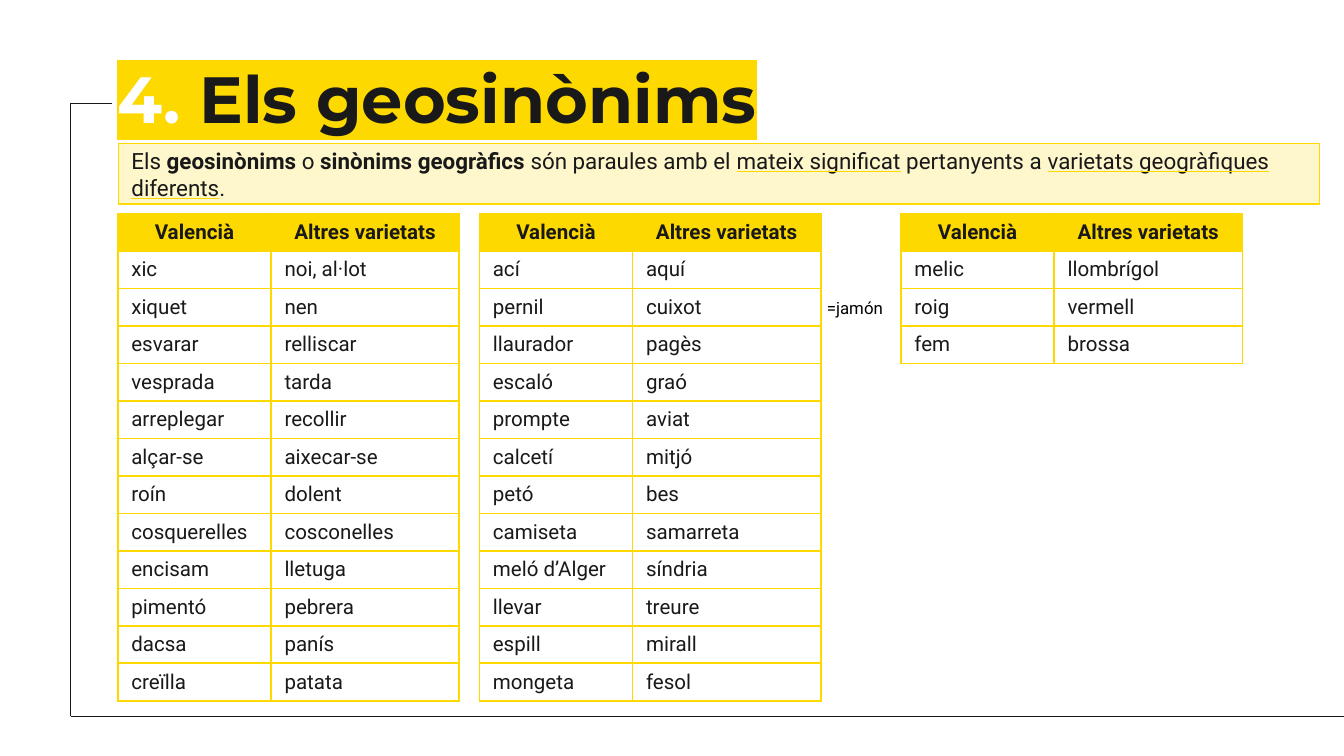
from lxml import etree
from pptx import Presentation
from pptx import util as u
from pptx.dml.color import RGBColor
from pptx.enum import shapes, text
from pptx.oxml import ns

UNIT = u.Inches(0.1)
COLUMNS, ROWS = 100, 56.25
COLORS = {"ink": "191919", "yellow": "FDD900", "white": "FFFFFF", "black": "000000"}
HEADERS = ("Valencià", "Altres varietats")
COLUMN_WIDTHS = (11.4, 14)
ROW_HEIGHT = 2.78
TABLE_TOP = 15.9
WORDS = [
    (8.77, [("xic", "noi, al·lot"), ("xiquet", "nen"), ("esvarar", "relliscar"),
            ("vesprada", "tarda"), ("arreplegar", "recollir"), ("alçar-se", "aixecar-se"),
            ("roín", "dolent"), ("cosquerelles", "cosconelles"), ("encisam", "lletuga"),
            ("pimentó", "pebrera"), ("dacsa", "panís"), ("creïlla", "patata")]),
    (35.67, [("ací", "aquí"), ("pernil", "cuixot"), ("llaurador", "pagès"),
             ("escaló", "graó"), ("prompte", "aviat"), ("calcetí", "mitjó"),
             ("petó", "bes"), ("camiseta", "samarreta"), ("meló d’Alger", "síndria"),
             ("llevar", "treure"), ("espill", "mirall"), ("mongeta", "fesol")]),
    (67.04, [("melic", "llombrígol"), ("roig", "vermell"), ("fem", "brossa")]),
]


def grid(*values):
    """Turn grid columns or rows into lengths."""
    return [u.Emu(round(value * UNIT)) for value in values]


def rgb(name):
    """Return a named colour."""
    return RGBColor.from_string(COLORS[name])


def add_solid(parent, tag, color, wrapped=True):
    """Append an element that holds a colour, inside a solid fill if wrapped."""
    element = etree.SubElement(parent, ns.qn(tag))
    holder = etree.SubElement(element, ns.qn("a:solidFill")) if wrapped else element
    etree.SubElement(holder, ns.qn("a:srgbClr"), val=COLORS[color])
    return element


def write(paragraph, content, size=11, font="Roboto", color="ink", bold=False,
          underline=None, highlight=None, align=text.PP_ALIGN.LEFT):
    """Add one formatted run to a paragraph."""
    paragraph.alignment = align
    run = paragraph.add_run()
    run.text = content
    run.font.size = u.Pt(size)
    run.font.bold = bold
    run.font.color.rgb = rgb(color)
    properties = run.font._element
    if highlight:
        add_solid(properties, "a:highlight", highlight, wrapped=False)
    if underline:
        run.font.underline = True
        add_solid(properties, "a:uFill", underline)
    run.font.name = font


def set_margins(frame, margin):
    """Give a text frame the same margin on all sides."""
    frame.margin_left = frame.margin_right = margin
    frame.margin_top = frame.margin_bottom = margin


def add_frame_lines(slide, left, top, right, bottom, stub):
    """Draw the open line frame around the content."""
    for ends in ((left, top, stub, top), (left, top, left, bottom),
                 (left, bottom, right, bottom)):
        line = slide.shapes.add_connector(shapes.MSO_CONNECTOR.STRAIGHT, *grid(*ends))
        line.line.color.rgb = rgb("ink")
        line.line.width = u.Pt(0.75)
        etree.SubElement(line._element.spPr, ns.qn("a:effectLst"))


def add_title(slide, *box):
    """Fill the title placeholder with the highlighted heading."""
    title = slide.shapes.title
    title.left, title.top, title.width, title.height = grid(*box)
    frame = title.text_frame
    frame.auto_size = text.MSO_AUTO_SIZE.NONE
    frame.vertical_anchor = text.MSO_ANCHOR.TOP
    set_margins(frame, UNIT)
    for content, color in (("4. ", "white"), ("Els geosinònims", "ink")):
        write(frame.paragraphs[0], content, size=35, font="Montserrat", color=color,
              bold=True, highlight="yellow")


def add_definition(slide, *box):
    """Add the pale box with the definition."""
    shape = slide.shapes.add_shape(shapes.MSO_SHAPE.RECTANGLE, *grid(*box))
    shape.shadow.inherit = False
    shape.fill.solid()
    shape.fill.fore_color.rgb = rgb("yellow")
    tint = shape._element.spPr.find(".//" + ns.qn("a:srgbClr"))
    etree.SubElement(tint, ns.qn("a:alpha"), val="20000")
    shape.line.color.rgb = rgb("yellow")
    shape.line.width = u.Pt(0.75)
    frame = shape.text_frame
    frame.word_wrap = True
    frame.vertical_anchor = text.MSO_ANCHOR.MIDDLE
    strong, marked = {"bold": True}, {"underline": "yellow"}
    for content, style in (
        ("Els ", {}), ("geosinònims", strong), (" o ", {}),
        ("sinònims geogràfics", strong), (" són paraules amb el ", {}),
        ("mateix significat", marked), (" pertanyents a ", {}),
        ("varietats geogràfiques diferents", marked), (".", {}),
    ):
        write(frame.paragraphs[0], content, size=12, **style)


def format_cell(cell, content, header):
    """Write one cell with its borders and fill."""
    properties = cell._tc.get_or_add_tcPr()
    for side in ("L", "R", "T", "B"):
        add_solid(properties, f"a:ln{side}", "yellow").set("w", str(u.Pt(1)))
    if header:
        cell.fill.solid()
        cell.fill.fore_color.rgb = rgb("yellow")
    else:
        cell.fill.background()
    align = text.PP_ALIGN.CENTER if header else text.PP_ALIGN.LEFT
    write(cell.text_frame.paragraphs[0], content, bold=header, align=align)


def add_word_table(slide, left, top, pairs):
    """Add a two-column table of word pairs under the headers."""
    rows = [HEADERS, *pairs]
    box = grid(left, top, sum(COLUMN_WIDTHS), ROW_HEIGHT * len(rows))
    table = slide.shapes.add_table(len(rows), len(HEADERS), *box).table
    table.horz_banding = False
    for column, width in zip(table.columns, grid(*COLUMN_WIDTHS)):
        column.width = width
    for index, (row, words) in enumerate(zip(table.rows, rows)):
        row.height = grid(ROW_HEIGHT)[0]
        for cell, word in zip(row.cells, words):
            format_cell(cell, word, header=index == 0)


def add_note(slide, *box):
    """Add the small note beside a table row."""
    frame = slide.shapes.add_textbox(*grid(*box)).text_frame
    frame.word_wrap = True
    frame.vertical_anchor = text.MSO_ANCHOR.TOP
    set_margins(frame, UNIT)
    write(frame.paragraphs[0], "=jamón", size=9, color="black")


def main():
    """Build and save the slide."""
    presentation = Presentation()
    presentation.slide_width, presentation.slide_height = grid(COLUMNS, ROWS)
    slide = presentation.slides.add_slide(presentation.slide_layouts[5])
    add_frame_lines(slide, 5.25, 7.7, 101.5, 53.3, stub=8.3)
    add_title(slide, 7.73, 3.3, 84.3, 6.3)
    add_definition(slide, 8.8, 10.68, 89.4, 4.5)
    for left, pairs in WORDS:
        add_word_table(slide, left, TABLE_TOP, pairs)
    add_note(slide, 60.54, 21.4, 6.5, 2.7)
    presentation.save("out.pptx")


if __name__ == "__main__":
    main()
